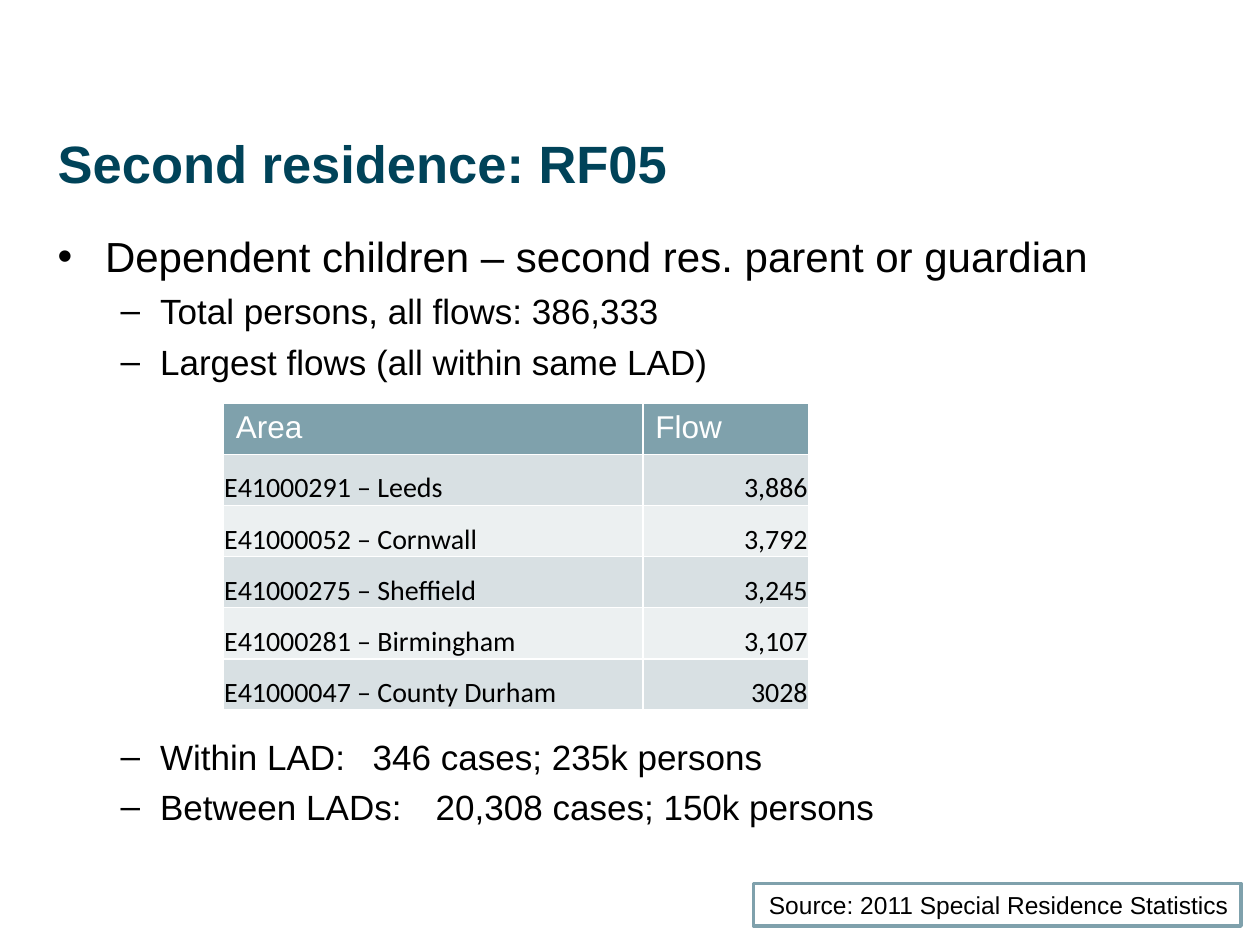
from pptx import Presentation
from pptx.dml.color import RGBColor
from pptx.enum.shapes import MSO_SHAPE
from pptx.enum.text import MSO_ANCHOR, MSO_AUTO_SIZE, PP_ALIGN
from pptx.util import Cm, Pt

LEFT, RIGHT = PP_ALIGN.LEFT, PP_ALIGN.RIGHT
TOP, MIDDLE, BOTTOM = MSO_ANCHOR.TOP, MSO_ANCHOR.MIDDLE, MSO_ANCHOR.BOTTOM
NO_FIT, GROW = MSO_AUTO_SIZE.NONE, MSO_AUTO_SIZE.SHAPE_TO_FIT_TEXT
RECTANGLE = MSO_SHAPE.RECTANGLE

TITLE = "Second residence: RF05"
TABLE_GAP = 201.5  # points left free for the table between two bullets
# (level, text, space before in points)
BULLETS = [
    (0, "Dependent children – second res. parent or guardian", 0),
    (1, "Total persons, all flows: 386,333", 5),
    (1, "Largest flows (all within same LAD)", 5),
    (1, "Within LAD:\t346 cases; 235k persons", TABLE_GAP),
    (1, "Between LADs:\t20,308 cases; 150k persons", 5),
]
HEADINGS = ("Area", "Flow")
FLOWS = [
    ("E41000291 – Leeds", "3,886"),
    ("E41000052 – Cornwall", "3,792"),
    ("E41000275 – Sheffield", "3,245"),
    ("E41000281 – Birmingham", "3,107"),
    ("E41000047 – County Durham", "3028"),
]
SOURCE = "Source: 2011 Special Residence Statistics"

THEME = {
    "font": "Arial",
    "table_font": "Calibri",
    "title": RGBColor(0x00, 0x43, 0x59),
    "text": RGBColor(0x00, 0x00, 0x00),
    "white": RGBColor(0xFF, 0xFF, 0xFF),
    "accent": RGBColor(0x7F, 0xA1, 0xAC),
    "bands": (RGBColor(0xD8, 0xE0, 0xE3), RGBColor(0xEC, 0xF0, 0xF1)),
    "title_size": 30,
    "level_sizes": (24, 20),
    "heading_size": 18,
    "cell_size": 16,
    "source_size": 14,
}

MARGIN = Cm(0.91)
CONTENT_WIDTH = Cm(23.57)
COLUMN_WIDTHS = (Cm(8.46), Cm(3.34))
ROW_HEIGHT = Cm(1.03)
CELL_INSET = Cm(0.02)


def write(paragraph, text, *, size, color=THEME["text"], font=THEME["font"],
          bold=False, align=LEFT):
    paragraph.alignment = align
    run = paragraph.add_run()
    run.text = text
    run.font.name = font
    run.font.size = Pt(size)
    run.font.bold = bold
    run.font.color.rgb = color


def place(shape, left, top, width, height):
    shape.left, shape.top, shape.width, shape.height = left, top, width, height


def add_title(slide):
    title = slide.shapes.title
    place(title, MARGIN, Cm(2.51), CONTENT_WIDTH, Cm(3.61))
    frame = title.text_frame
    frame.auto_size = NO_FIT
    frame.vertical_anchor = TOP
    write(frame.paragraphs[0], TITLE, size=THEME["title_size"],
          color=THEME["title"], bold=True)


def add_bullets(slide):
    body = slide.placeholders[1]
    place(body, MARGIN, Cm(4.52), CONTENT_WIDTH, Cm(9.6))
    frame = body.text_frame
    frame.auto_size = NO_FIT
    for index, (level, text, space_before) in enumerate(BULLETS):
        paragraph = frame.add_paragraph() if index else frame.paragraphs[0]
        paragraph.level = level
        paragraph.space_before = Pt(space_before)
        write(paragraph, text, size=THEME["level_sizes"][level])


def fill_cell(cell, color):
    cell.fill.solid()
    cell.fill.fore_color.rgb = color


def add_flow_table(slide):
    row_count = len(FLOWS) + 1
    table = slide.shapes.add_table(
        row_count, len(HEADINGS), Cm(4.5), Cm(8.13),
        sum(COLUMN_WIDTHS), ROW_HEIGHT * row_count).table
    for column, width in zip(table.columns, COLUMN_WIDTHS):
        column.width = width
    for column, heading in enumerate(HEADINGS):
        cell = table.cell(0, column)
        fill_cell(cell, THEME["accent"])
        write(cell.text_frame.paragraphs[0], heading,
              size=THEME["heading_size"], color=THEME["white"])
    for row, flow in enumerate(FLOWS, start=1):
        for column, (value, align) in enumerate(zip(flow, (LEFT, RIGHT))):
            cell = table.cell(row, column)
            fill_cell(cell, THEME["bands"][(row - 1) % 2])
            cell.vertical_anchor = BOTTOM
            cell.margin_left = cell.margin_right = cell.margin_top = CELL_INSET
            cell.margin_bottom = 0
            write(cell.text_frame.paragraphs[0], value, align=align,
                  size=THEME["cell_size"], font=THEME["table_font"])


def add_source(slide):
    box = slide.shapes.add_shape(RECTANGLE, Cm(15.19), Cm(17.81), Cm(9.83), Cm(0.86))
    box.shadow.inherit = False
    box.fill.solid()
    box.fill.fore_color.rgb = THEME["white"]
    box.line.color.rgb = THEME["accent"]
    box.line.width = Pt(2)
    frame = box.text_frame
    frame.word_wrap = False
    frame.auto_size = GROW
    frame.vertical_anchor = MIDDLE
    write(frame.paragraphs[0], SOURCE, size=THEME["source_size"], align=RIGHT)


def main():
    deck = Presentation()
    deck.slide_width, deck.slide_height = Cm(25.4), Cm(19.05)
    slide = deck.slides.add_slide(deck.slide_layouts[1])
    add_title(slide)
    add_bullets(slide)
    add_flow_table(slide)
    add_source(slide)
    deck.save("out.pptx")


if __name__ == "__main__":
    main()
